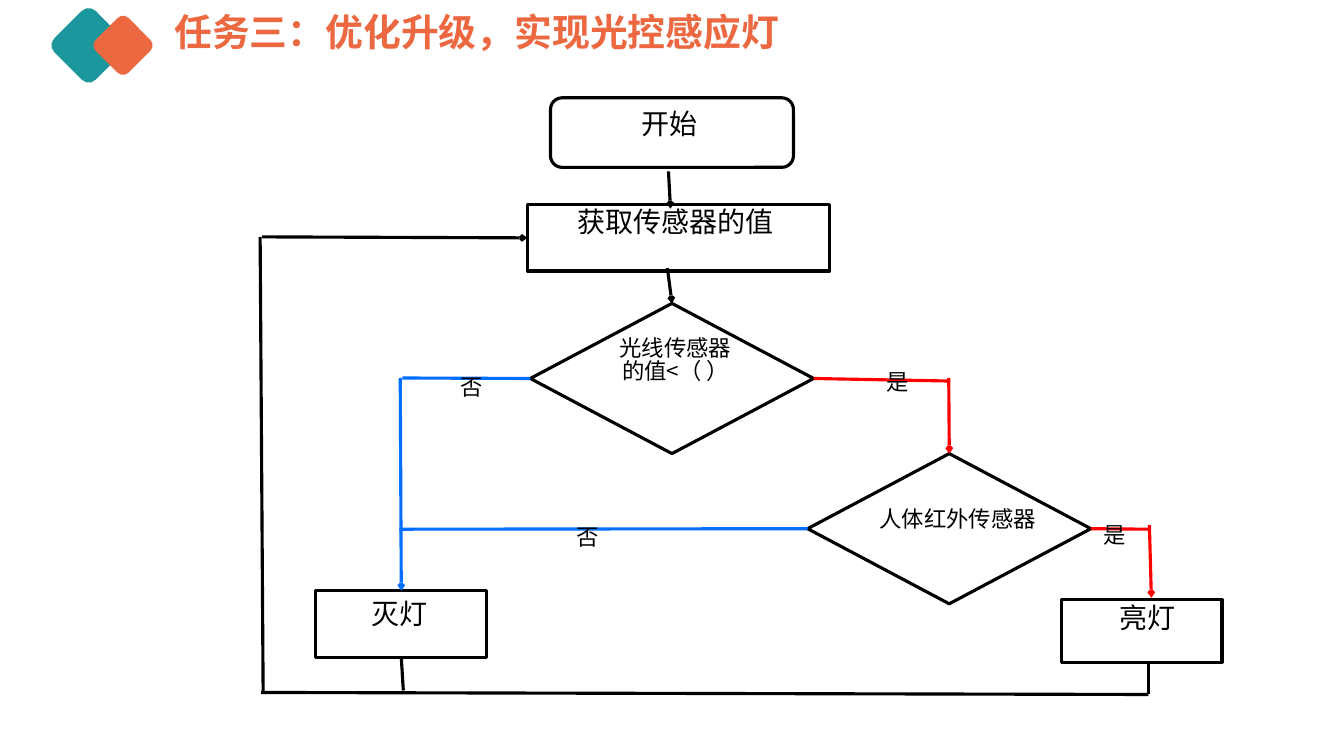
from dataclasses import dataclass

from lxml.etree import SubElement
from pptx import Presentation
from pptx.dml.color import RGBColor
from pptx.enum.shapes import MSO_CONNECTOR as Connector, MSO_SHAPE as Shape
from pptx.enum.text import PP_ALIGN as Align
from pptx.oxml.ns import qn
from pptx.util import Inches, Pt


@dataclass(frozen=True)
class Theme:
    font: str = "Noto Sans CJK SC"
    black: str = "000000"
    red: str = "FF0000"
    blue: str = "006EFF"
    teal: str = "1D979E"
    orange: str = "EC6841"
    title: int = 27
    step: int = 20
    label: int = 16
    line: float = 2.25
    line_spacing: float = 0.85


THEME = Theme()
TOP, LEFT, BOTTOM, RIGHT = range(4)


def rgb(color):
    return RGBColor.from_string(color)


def add_text(page, text, at, size, color=THEME.black, align=Align.CENTER, bold=False):
    box = page.shapes.add_textbox(*map(Inches, at))
    frame = box.text_frame
    frame.word_wrap = True
    frame.text = text
    for para in frame.paragraphs:
        para.alignment = align
        para.line_spacing = THEME.line_spacing
        font = para.font
        font.size, font.bold, font.name = Pt(size), bold, THEME.font
        font.color.rgb = rgb(color)
        # East Asian glyphs need their own typeface entry
        defaults = para._p.pPr.find(qn("a:defRPr"))
        SubElement(defaults, qn("a:ea"), typeface=THEME.font)


def add_node(page, kind, at, text, text_at, size):
    """Outlined flowchart shape with its caption."""
    node = page.shapes.add_shape(kind, *map(Inches, at))
    node.shadow.inherit = False
    node.fill.background()
    node.line.color.rgb = rgb(THEME.black)
    node.line.width = Pt(THEME.line)
    add_text(page, text, text_at, size)
    return node


def add_flow(page, start, end, color=THEME.black, arrow=False, source=None, target=None):
    """Straight line; source and target are (node, side) pairs to join."""
    flow = page.shapes.add_connector(Connector.STRAIGHT, *map(Inches, start + end))
    flow.line.color.rgb = rgb(color)
    flow.line.width = Pt(THEME.line)
    if arrow:
        SubElement(flow.line._get_or_add_ln(), qn("a:tailEnd"),
                   type="arrow", w="sm", len="sm")
    SubElement(flow._element.spPr, qn("a:effectLst"))
    if source:
        flow.begin_connect(*source)
    if target:
        flow.end_connect(*target)


def add_tile(page, left, top, side, color):
    tile = page.shapes.add_shape(Shape.ROUNDED_RECTANGLE, *map(Inches, (left, top, side, side)))
    tile.shadow.inherit = False
    tile.rotation = 45
    tile.fill.solid()
    tile.fill.fore_color.rgb = rgb(color)
    tile.line.fill.background()


def add_header(page):
    add_tile(page, 0.59, 0.16, 0.58, THEME.teal)
    add_tile(page, 0.99, 0.22, 0.46, THEME.orange)
    add_text(page, "任务三：优化升级，实现光控感应灯", (1.63, 0.11, 7.81, 0.64),
             THEME.title, THEME.orange, Align.LEFT, bold=True)


def add_flowchart(page):
    # Steps and decisions
    add_node(page, Shape.ROUNDED_RECTANGLE, (5.46, 0.97, 2.41, 0.69),
             "开始", (5.64, 1.06, 2, 0.57), THEME.step)
    read = add_node(page, Shape.RECTANGLE, (5.23, 2.03, 3, 0.66),
                    "获取传感器的值", (5.16, 2.03, 3.08, 0.57), THEME.step)
    light = add_node(page, Shape.DIAMOND, (5.26, 3.01, 2.81, 1.49),
                     "光线传感器\n的值<（ ）", (5.88, 3.31, 1.64, 0.79), THEME.label)
    body = add_node(page, Shape.DIAMOND, (8.01, 4.5, 2.81, 1.49),
                    "人体红外传感器", (8.61, 5, 1.78, 0.52), THEME.label)
    add_node(page, Shape.RECTANGLE, (10.53, 5.95, 1.59, 0.62),
             "亮灯", (10.71, 5.96, 1.34, 0.57), THEME.step)
    lamp_off = add_node(page, Shape.RECTANGLE, (3.13, 5.86, 1.7, 0.66),
                        "灭灯", (3.29, 5.92, 1.34, 0.57), THEME.step)

    # Main path down
    add_flow(page, (6.63, 1.7), (6.65, 2.07), arrow=True)
    add_flow(page, (6.62, 2.66), (6.64, 3), arrow=True, target=(light, TOP))

    # Yes branches
    add_flow(page, (8.05, 3.76), (9.41, 3.78), THEME.red, source=(light, RIGHT))
    add_flow(page, (9.41, 3.75), (9.43, 4.47), THEME.red, arrow=True, target=(body, TOP))
    add_flow(page, (10.8, 5.23), (11.4, 5.25), THEME.red, source=(body, RIGHT))
    add_flow(page, (11.4, 5.21), (11.42, 5.93), THEME.red, arrow=True)

    # No branches
    add_flow(page, (3.99, 3.75), (5.25, 3.77), THEME.blue, target=(light, LEFT))
    add_flow(page, (3.97, 3.75), (3.99, 5.85), THEME.blue, arrow=True, target=(lamp_off, TOP))
    add_flow(page, (3.96, 5.25), (8.04, 5.27), THEME.blue, target=(body, LEFT))

    # Loop back to the sensor reading
    add_flow(page, (4, 6.53), (4, 6.85), source=(lamp_off, BOTTOM))
    add_flow(page, (11.39, 6.58), (11.39, 6.89))
    add_flow(page, (2.59, 6.87), (11.39, 6.89))
    add_flow(page, (2.58, 2.35), (2.61, 6.88))
    add_flow(page, (2.6, 2.35), (5.18, 2.37), arrow=True, target=(read, LEFT))

    # Branch labels
    for answer, left, top in (("是", 8.65, 3.64), ("否", 4.42, 3.69),
                              ("否", 5.57, 5.18), ("是", 10.8, 5.16)):
        add_text(page, answer, (left, top, 0.51, 0.5), THEME.label)


def main():
    deck = Presentation()
    deck.slide_width, deck.slide_height = Inches(13.33), Inches(7.5)
    page = deck.slides.add_slide(deck.slide_layouts[6])
    add_flowchart(page)
    add_header(page)
    deck.save("out.pptx")


if __name__ == "__main__":
    main()
